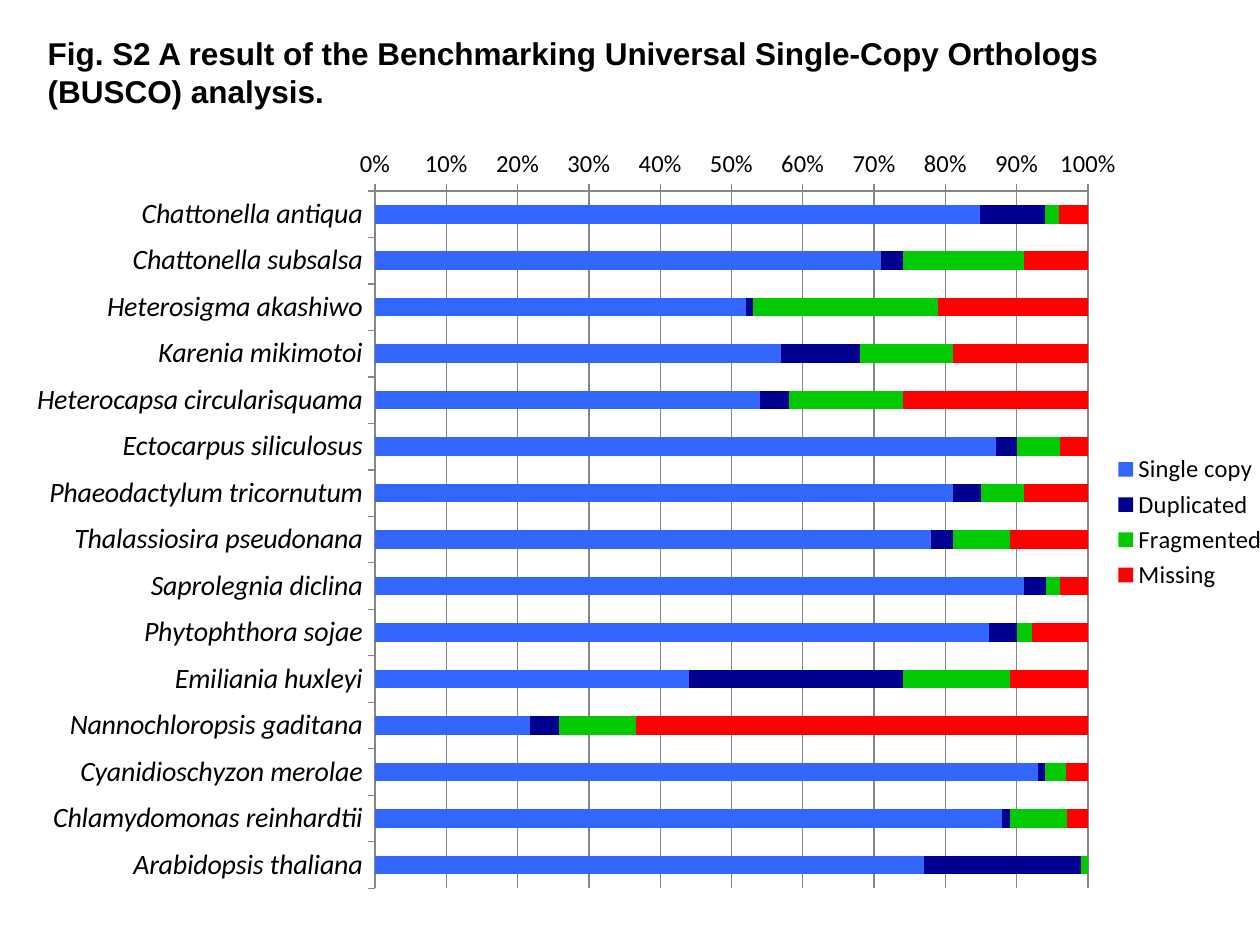
from dataclasses import dataclass

from pptx import Presentation
from pptx import util as u
from pptx.chart.data import CategoryChartData
from pptx.dml.color import RGBColor
from pptx.enum import chart as ch, text
from pptx.oxml import parse_xml
from pptx.oxml.ns import nsdecls, qn


@dataclass(frozen=True)
class Theme:
    ink: str = "000000"
    rule: str = "868686"
    series: tuple = ("3366FF", "000090", "01CA03", "FF0000")
    title_font: str = "Arial"
    chart_font: str = "Calibri"
    title_size: int = 18
    species_size: int = 16
    scale_size: int = 14


TITLE = ("Fig. S2 A result of the Benchmarking Universal Single-Copy "
         "Orthologs (BUSCO) analysis.")
CLASSES = ("Single copy", "Duplicated", "Fragmented", "Missing")
# Percent of orthologs per species, in the order of CLASSES
RESULTS = {
    "Chattonella antiqua": (84, 9, 2, 4),
    "Chattonella subsalsa": (71, 3, 17, 9),
    "Heterosigma akashiwo": (52, 1, 26, 21),
    "Karenia mikimotoi": (57, 11, 13, 19),
    "Heterocapsa circularisquama": (54, 4, 16, 26),
    "Ectocarpus siliculosus": (88, 3, 6, 4),
    "Phaeodactylum tricornutum": (81, 4, 6, 9),
    "Thalassiosira pseudonana": (78, 3, 8, 11),
    "Saprolegnia diclina": (92, 3, 2, 4),
    "Phytophthora sojae": (87, 4, 2, 8),
    "Emiliania huxleyi": (44, 30, 15, 11),
    "Nannochloropsis gaditana": (22, 4, 11, 64),
    "Cyanidioschyzon merolae": (92, 1, 3, 3),
    "Chlamydomonas reinhardtii": (88, 1, 8, 3),
    "Arabidopsis thaliana": (77, 22, 1, 0),
}


class SlideBuilder:
    def __init__(self, slide, theme):
        self.slide = slide
        self.theme = theme

    def style_font(self, font, size, name, bold=False, italic=False):
        font.size = u.Pt(size)
        font.name = name
        font.bold = bold
        font.italic = italic
        font.color.rgb = RGBColor.from_string(self.theme.ink)

    def title(self, wording, left, top, width, height):
        heading = self.slide.shapes.title
        heading.left, heading.top = u.Pt(left), u.Pt(top)
        heading.width, heading.height = u.Pt(width), u.Pt(height)
        frame = heading.text_frame
        frame.text = wording
        frame.word_wrap = True
        frame.auto_size = text.MSO_AUTO_SIZE.NONE
        frame.vertical_anchor = text.MSO_ANCHOR.TOP
        line = frame.paragraphs[0]
        line.alignment = text.PP_ALIGN.LEFT
        self.style_font(line.runs[0].font, self.theme.title_size,
                        self.theme.title_font, bold=True)

    def stacked_bars(self, classes, results, left, top, width, height, plot_box):
        data = CategoryChartData(number_format="General")
        data.categories = list(results)
        for name, shares in zip(classes, zip(*results.values())):
            data.add_series(name, shares)
        chart = self.slide.shapes.add_chart(
            ch.XL_CHART_TYPE.BAR_STACKED_100,
            u.Pt(left), u.Pt(top), u.Pt(width), u.Pt(height), data).chart
        theme = self.theme
        chart.has_title = False
        self.style_font(chart.font, theme.scale_size, theme.chart_font)

        bars = chart.plots[0]
        bars.gap_width, bars.overlap = 150, 100
        bars.vary_by_categories = False
        for series, color in zip(bars.series, theme.series):
            series.format.fill.solid()
            series.format.fill.fore_color.rgb = RGBColor.from_string(color)

        species, scale = chart.category_axis, chart.value_axis
        species.reverse_order = True
        scale.has_major_gridlines = True
        scale.tick_labels.number_format = "0%"
        scale.tick_labels.number_format_is_linked = False
        for axis in (species, scale):
            axis.major_tick_mark = ch.XL_TICK_MARK.OUTSIDE
            axis.minor_tick_mark = ch.XL_TICK_MARK.NONE
        for ruled in (species, scale, scale.major_gridlines):
            ruled.format.line.color.rgb = RGBColor.from_string(theme.rule)
            ruled.format.line.width = u.Pt(0.75)
        self.style_font(species.tick_labels.font, theme.species_size,
                        theme.chart_font, italic=True)
        self.style_font(scale.tick_labels.font, theme.scale_size, theme.chart_font)

        chart.has_legend = True
        chart.legend.position = ch.XL_LEGEND_POSITION.RIGHT
        chart.legend.include_in_layout = False
        self.style_font(chart.legend.font, theme.scale_size, theme.chart_font)
        self.place_plot(chart, plot_box)

    def place_plot(self, chart, plot_box):
        """Fix the inner plot area, given as fractions of the chart."""
        area = chart.plots[0]._element.getparent()
        for automatic in area.findall(qn("c:layout")):
            area.remove(automatic)
        sides = "".join(f'<c:{side} val="{share}"/>'
                        for side, share in zip("xywh", plot_box))
        area.insert(0, parse_xml(
            f'<c:layout {nsdecls("c")}><c:manualLayout>'
            '<c:layoutTarget val="inner"/>'
            '<c:xMode val="edge"/><c:yMode val="edge"/>'
            f'{sides}</c:manualLayout></c:layout>'))


def main():
    deck = Presentation()
    deck.slide_width, deck.slide_height = u.Pt(720), u.Pt(540)
    title_only = deck.slide_layouts[5]
    figure = SlideBuilder(deck.slides.add_slide(title_only), Theme())
    figure.title(TITLE, 20, 16, 680, 51)
    figure.stacked_bars(CLASSES, RESULTS, 0, 76.3, 731.5, 444.2,
                        plot_box=(0.293, 0.074, 0.557, 0.897))
    deck.save("out.pptx")


if __name__ == "__main__":
    main()
